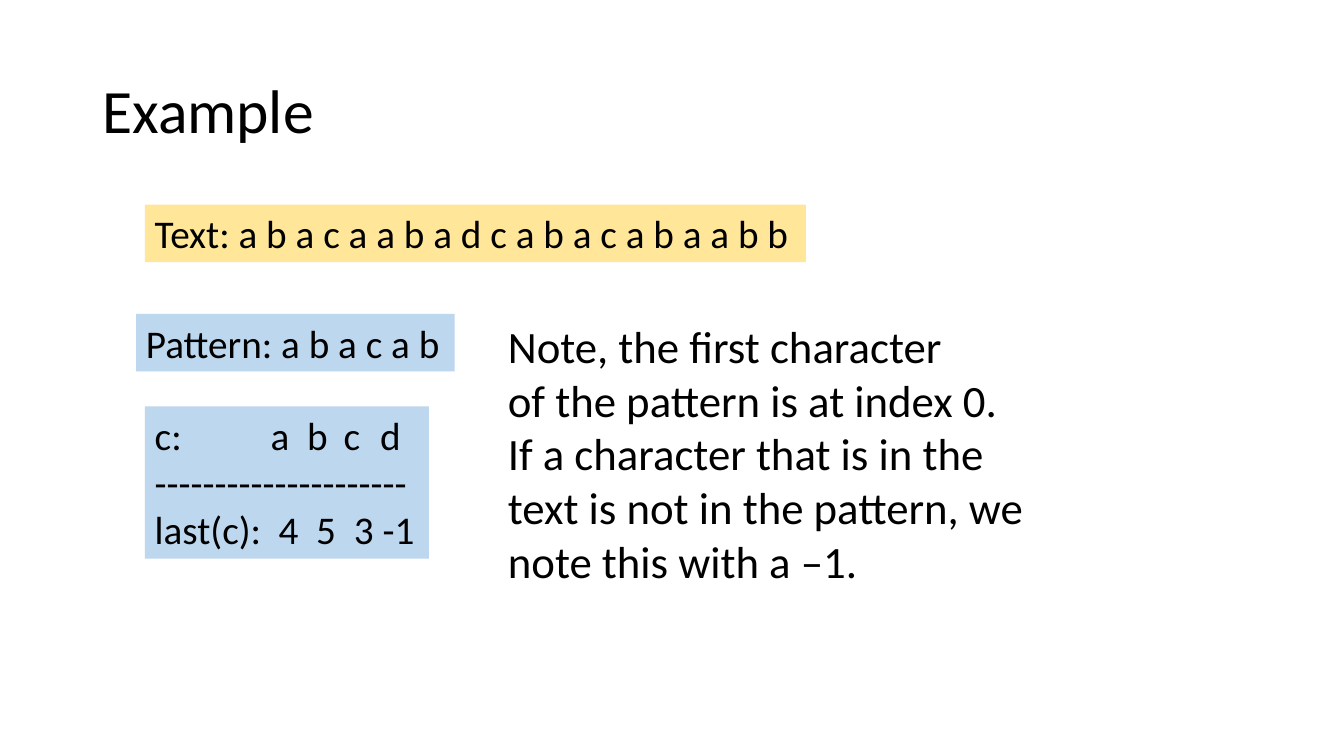
from dataclasses import dataclass

from lxml import etree
from pptx import Presentation
from pptx import util as u
from pptx.dml.color import RGBColor
from pptx.enum import shapes, text
from pptx.oxml.ns import qn


@dataclass(frozen=True)
class Theme:
    font: str = "Calibri"
    ink: str = "000000"
    gold: str = "FFE699"
    blue: str = "BDD7EE"
    title: int = 44
    note: int = 32
    code: int = 28


THEME = Theme()


def write(shape, lines, size):
    """Fill a shape with one left-aligned paragraph per line."""
    frame = shape.text_frame
    frame.text = "\n".join(lines)
    frame.word_wrap = True
    frame.vertical_anchor = text.MSO_ANCHOR.TOP
    for para in frame.paragraphs:
        para.alignment = text.PP_ALIGN.LEFT
        for run in para.runs:
            run.font.name = THEME.font
            run.font.size = u.Pt(size)
            run.font.color.rgb = RGBColor.from_string(THEME.ink)
    return frame


def label(slide, box, lines, size):
    area = slide.shapes.add_textbox(*map(u.Cm, box))
    return write(area, lines, size)


def panel(slide, box, lines, fill):
    area = slide.shapes.add_shape(
        shapes.MSO_SHAPE.RECTANGLE, *map(u.Cm, box))
    area.shadow.inherit = False
    area.fill.solid()
    area.fill.fore_color.rgb = RGBColor.from_string(fill)
    area.line.fill.background()
    return write(area, lines, THEME.code)


def set_tabs(para, start, step, count):
    """Set equally spaced left tab stops, in centimetres."""
    stops = etree.SubElement(para._p.get_or_add_pPr(), qn("a:tabLst"))
    for i in range(count):
        stop = etree.SubElement(stops, qn("a:tab"))
        stop.set("pos", str(int(u.Cm(start + i * step))))
        stop.set("algn", "l")


def head(slide, box):
    frame = label(slide, box, ["Example"], THEME.title)
    frame.vertical_anchor = text.MSO_ANCHOR.MIDDLE
    frame.paragraphs[0].line_spacing = 0.9


def last_table(slide, box):
    """Show the last index of each letter in the pattern."""
    rows = ["c:\ta\tb\tc\td", "-" * 21, "last(c):\t4\t5\t3 -1"]
    frame = panel(slide, box, rows, THEME.blue)
    set_tabs(frame.paragraphs[0], 2.92, 0.92, 4)
    set_tabs(frame.paragraphs[2], 3.12, 0.95, 3)


def strings(slide, left, top):
    """Place the text, the pattern and its table from one corner."""
    panel(slide, (left + 0.22, top, 16.66, 1.45),
          ["Text: a b a c a a b a d c a b a c a b a a b b"], THEME.gold)
    panel(slide, (left, top + 2.75, 8.03, 1.45),
          ["Pattern: a b a c a b"], THEME.blue)
    last_table(slide, (left + 0.22, top + 5.08, 7.16, 3.84))


def note(slide, box):
    label(slide, box, [
        "Note, the first character",
        "of the pattern is at index 0.",
        "If a character that is in the",
        "text is not in the pattern, we",
        "note this with a –1.",
    ], THEME.note)


def main():
    deck = Presentation()
    deck.slide_width, deck.slide_height = u.Cm(33.87), u.Cm(19.05)
    slide = deck.slides.add_slide(deck.slide_layouts[6])
    head(slide, (2.33, 1.01, 29.21, 3.68))
    strings(slide, 3.43, 5.16)
    note(slide, (12.55, 7.9, 13.67, 7.09))
    deck.save("out.pptx")


if __name__ == "__main__":
    main()
